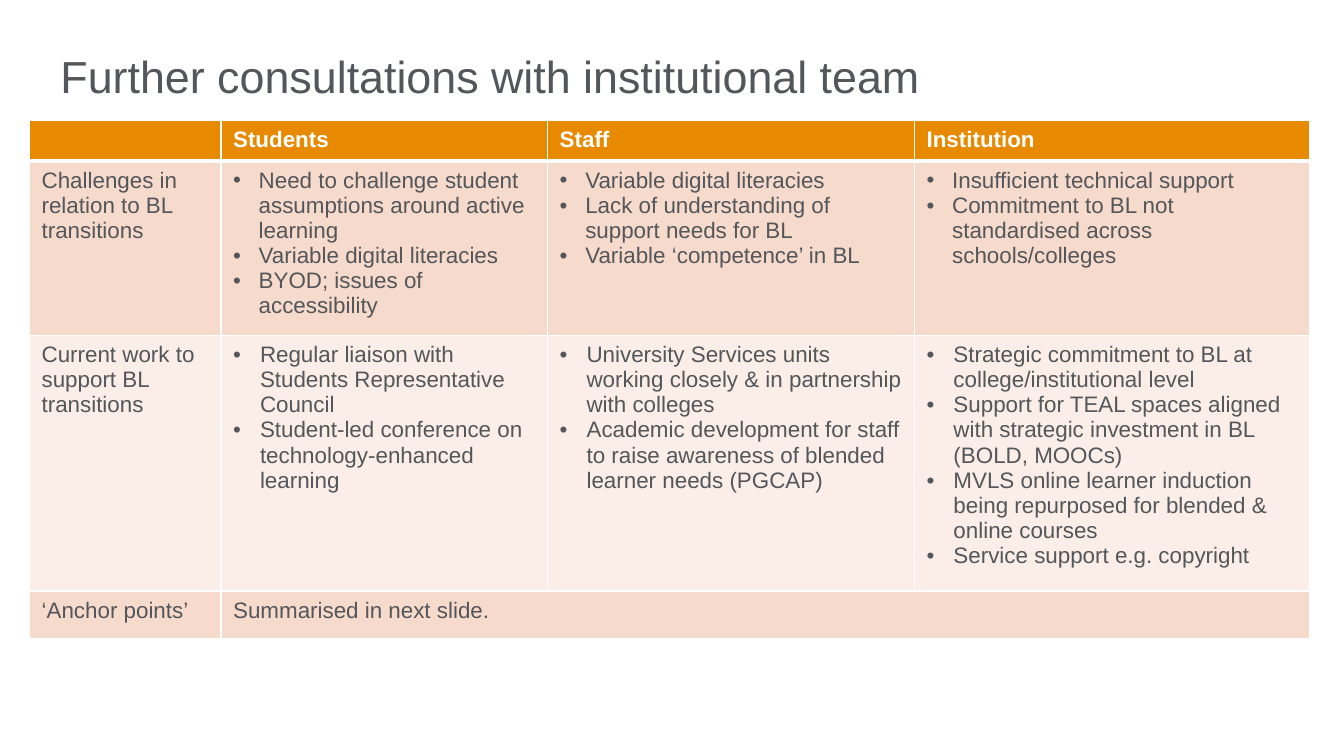
from dataclasses import dataclass

from lxml import etree
from pptx import Presentation
from pptx.dml.color import RGBColor
from pptx.enum.text import MSO_ANCHOR, PP_ALIGN
from pptx.oxml.ns import qn
from pptx.util import Inches, Pt

LEFT = PP_ALIGN.LEFT
TOP, MIDDLE = MSO_ANCHOR.TOP, MSO_ANCHOR.MIDDLE


@dataclass(frozen=True)
class Theme:
    font: str = "Arial"
    ink: str = "53565A"
    white: str = "FFFFFF"
    head: str = "E88A00"
    bands: tuple = ("F6DACC", "FBEDE7")
    title: int = 24
    body: int = 12
    thin: int = 1
    thick: int = 3


def write(frame, text, *, size, color, font, bold=False, indent=0):
    """Fill a frame, one paragraph a line; an indent adds bullets."""
    frame.word_wrap = True
    for n, line in enumerate(text.split("\n")):
        para = frame.add_paragraph() if n else frame.paragraphs[0]
        para.alignment = LEFT
        para.space_before = Pt(0)
        if not line:
            etree.SubElement(para._p, qn("a:endParaRPr"), sz=str(size * 100))
            continue
        if indent:
            props = para._p.get_or_add_pPr()
            props.set("marL", str(Inches(indent)))
            props.set("indent", str(-Inches(indent)))
            etree.SubElement(props, qn("a:buFont"), typeface=font)
            etree.SubElement(props, qn("a:buChar"), char="•")
        run = para.add_run()
        run.text = line
        run.font.name, run.font.size, run.font.bold = font, Pt(size), bold
        run.font.color.rgb = RGBColor.from_string(color)


class Deck:
    def __init__(self, theme):
        self.theme = theme
        self.file = Presentation()
        self.file.slide_width = Inches(10)
        self.file.slide_height = Inches(10) * 9 // 16
        self.slide = self.file.slides.add_slide(self.file.slide_layouts[5])

    def wide(self, share):
        """Turn percent of the slide width into a length."""
        return round(self.file.slide_width * share / 100)

    def high(self, share):
        """Turn percent of the slide height into a length."""
        return round(self.file.slide_height * share / 100)

    def title(self, text, x, y, w, h):
        box = self.slide.shapes.title
        box.left, box.top = self.wide(x), self.high(y)
        box.width, box.height = self.wide(w), self.high(h)
        box.text_frame.vertical_anchor = MIDDLE
        # A deeper bottom inset lifts the line within its box
        box.text_frame.margin_top = 0
        box.text_frame.margin_bottom = Inches(0.09)
        write(box.text_frame, text, size=self.theme.title,
              color=self.theme.ink, font=self.theme.font)

    def edges(self, cell, row):
        """Draw white cell borders, heavier under the header."""
        props = cell._tc.get_or_add_tcPr()
        heavy = {0: "lnB", 1: "lnT"}.get(row)
        for n, side in enumerate(("lnL", "lnR", "lnT", "lnB")):
            width = self.theme.thick if side == heavy else self.theme.thin
            line = etree.Element(qn("a:" + side), w=str(Pt(width)))
            fill = etree.SubElement(line, qn("a:solidFill"))
            etree.SubElement(fill, qn("a:srgbClr"), val=self.theme.white)
            props.insert(n, line)

    def table(self, rows, x, y, cols, heights, indents):
        look = self.theme
        grid = self.slide.shapes.add_table(
            len(rows), len(cols), self.wide(x), self.high(y),
            self.wide(sum(cols)), self.high(sum(heights))).table
        for col, share in zip(grid.columns, cols):
            col.width = self.wide(share)
        for r, texts in enumerate(rows):
            grid.rows[r].height = self.high(heights[r])
            fill = look.bands[(r - 1) % 2] if r else look.head
            for c in range(len(cols)):
                cell = grid.cell(r, c)
                cell.margin_left = cell.margin_right = Inches(0.09)
                cell.margin_top = cell.margin_bottom = Inches(0.05)
                cell.vertical_anchor = TOP
                cell.fill.solid()
                cell.fill.fore_color.rgb = RGBColor.from_string(fill)
                self.edges(cell, r)
                write(cell.text_frame, texts[c] if c < len(texts) else "",
                      size=look.body, font=look.font, bold=r == 0,
                      color=look.ink if r else look.white,
                      indent=indents[r] if c else 0)
            # A short row spans the remaining columns
            if len(texts) < len(cols):
                grid.cell(r, len(texts) - 1).merge(grid.cell(r, len(cols) - 1))


ROWS = [
    ["", "Students", "Staff", "Institution"],
    ["Challenges in relation to BL transitions",
     "Need to challenge student assumptions around active learning\n"
     "Variable digital literacies\n"
     "BYOD; issues of accessibility",
     "Variable digital literacies\n"
     "Lack of understanding of support needs for BL\n"
     "Variable ‘competence’ in BL",
     "Insufficient technical support\n"
     "Commitment to BL not standardised across schools/colleges"],
    ["Current work to support BL transitions",
     "Regular liaison with Students Representative Council\n"
     "Student-led conference on technology-enhanced learning",
     "University Services units working closely & in partnership with colleges\n"
     "Academic development for staff to raise awareness of blended learner "
     "needs (PGCAP)",
     "Strategic commitment to BL at college/institutional level\n"
     "Support for TEAL spaces aligned with strategic investment in BL "
     "(BOLD, MOOCs)\n"
     "MVLS online learner induction being repurposed for blended & "
     "online courses\n"
     "Service support e.g. copyright"],
    ["‘Anchor points’", "Summarised in next slide."],
]


def main():
    deck = Deck(Theme())
    # Heading
    deck.title("Further consultations with institutional team",
               3.5, 5.5, 82.7, 10.5)
    # Consultation table
    deck.table(ROWS, 2.2, 15.9, cols=(14.25, 24.3, 27.3, 29.4),
               heights=(5.35, 23.1, 33.8, 6.3), indents=(0, 0.19, 0.2, 0))
    deck.file.save("out.pptx")


if __name__ == "__main__":
    main()
